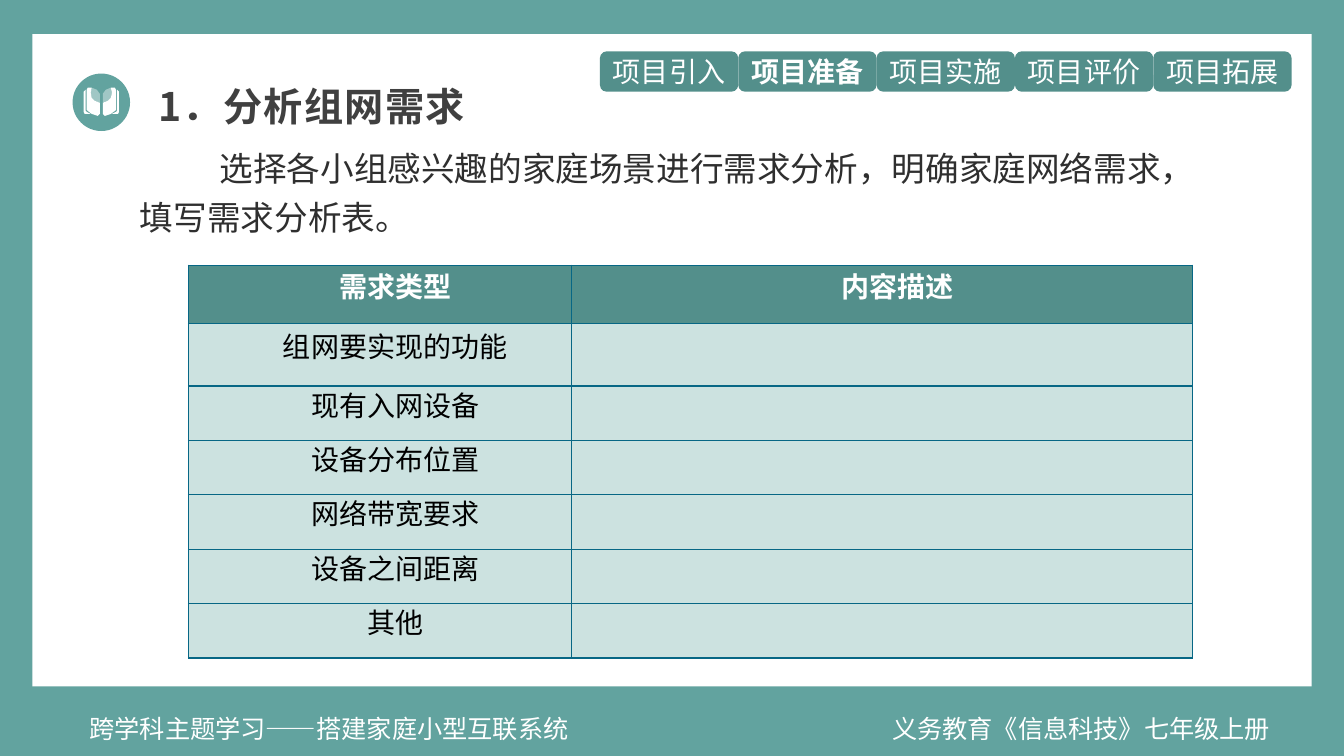
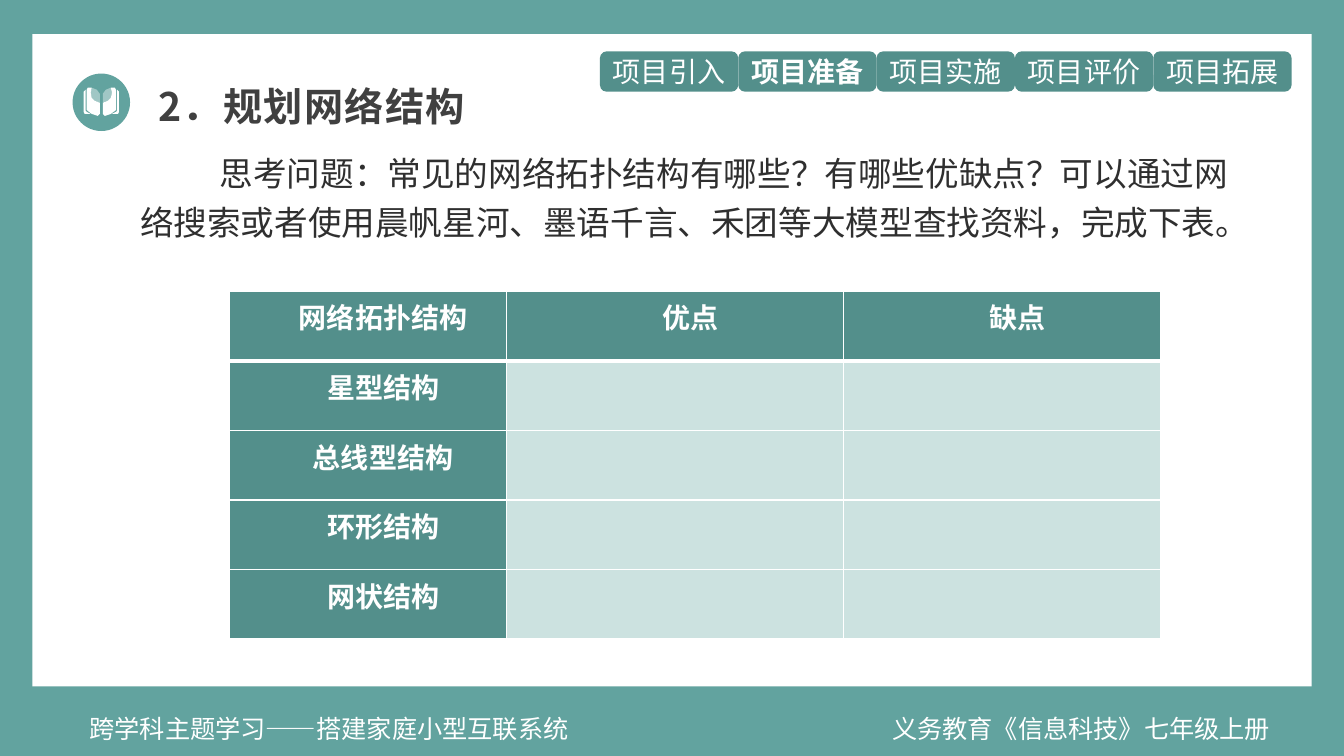
from dataclasses import dataclass

from lxml import etree
from pptx import Presentation
from pptx import util as u
from pptx.dml.color import RGBColor
from pptx.enum import shapes, text
from pptx.oxml import ns


@dataclass(frozen=True)
class Theme:
    # Colours
    teal: str = "62A39F"
    dark_teal: str = "538F8B"
    pale_teal: str = "CCE2E0"
    grid_blue: str = "076785"
    white: str = "FFFFFF"
    black: str = "000000"
    title: str = "404040"
    body: str = "2F2F2F"
    # Fonts and type sizes
    font: str = "Noto Sans CJK SC"
    latin: str = "Calibri"
    title_size: int = 28
    body_size: int = 24
    label_size: int = 20
    footer_size: int = 18


T = Theme()
CENTER = text.PP_ALIGN.CENTER
STAGES = ["项目引入", "项目准备", "项目实施", "项目评价", "项目拓展"]
CURRENT_STAGE = "项目准备"

# Right half of the book icon, in inches; the left half is its mirror image
SPINE = 1.005
PAGE = [(1.02, 1.02), (1.02, 1.13), (1.04, 1.15), (1.1, 1.13), (1.14, 1.1),
        (1.15, 1.09), (1.15, 0.89), (1.14, 0.87), (1.1, 0.87), (1.11, 0.92),
        (1.1, 0.97), (1.07, 1.0)]
COVER = [(1.15, 1.11), (1.11, 1.13), (1.15, 1.13), (1.17, 1.13), (1.18, 1.11),
         (1.18, 0.91), (1.16, 0.89), (1.16, 1.1)]
LEAF = [(1.1, 0.87), (1.05, 0.89), (1.02, 0.93), (1.02, 1.02), (1.07, 1.0),
        (1.1, 0.97), (1.11, 0.92)]


def rgb(color):
    return RGBColor.from_string(color)


def sub(parent, tag, **attrs):
    return etree.SubElement(parent, ns.qn(tag), attrs)


def write(tf, content, *, size, color, font=T.font, bold=False, align=None,
          indent=0, line=None, tracking=0):
    """Put one formatted paragraph into a text frame."""
    p = tf.paragraphs[0]
    if align is not None:
        p.alignment = align
    if line is not None:
        p.line_spacing = line
    if indent:
        pPr = p._p.get_or_add_pPr()
        pPr.set("marL", "0")
        pPr.set("indent", str(u.Inches(indent)))
    r = p.add_run()
    r.text = content
    r.font.size, r.font.bold, r.font.name = u.Pt(size), bold, font
    r.font.color.rgb = rgb(color)
    rPr = r._r.get_or_add_rPr()
    sub(rPr, "a:ea", typeface=T.font)
    if tracking:
        rPr.set("spc", str(tracking * 100))


def set_borders(cell, color, **widths):
    tcPr = cell._tc.get_or_add_tcPr()
    for side in "LRTB":
        ln = sub(tcPr, f"a:ln{side}", w=str(u.Pt(widths.get(side, 1))))
        sub(sub(ln, "a:solidFill"), "a:srgbClr", val=color)


class Deck:
    def __init__(self):
        self.prs = Presentation()
        self.prs.slide_width = u.Inches(13.33)
        self.prs.slide_height = u.Inches(7.5)
        fill = self.prs.slide_master.background.fill
        fill.solid()
        fill.fore_color.rgb = rgb(T.teal)
        self.s = None

    def paint(self, sp, color, alpha=None):
        sp.shadow.inherit = False
        sp.fill.solid()
        sp.fill.fore_color.rgb = rgb(color)
        sp.line.fill.background()
        if alpha is not None:
            clr = sp._element.spPr.find(".//" + ns.qn("a:srgbClr"))
            sub(clr, "a:alpha", val=str(alpha * 1000))

    def shape(self, kind, left, top, width, height, color):
        sp = self.s.shapes.add_shape(kind, *map(u.Inches, (left, top, width, height)))
        self.paint(sp, color)
        return sp

    def textbox(self, left, top, width, height, content, wrap=True, **fmt):
        box = self.s.shapes.add_textbox(*map(u.Inches, (left, top, width, height)))
        tf = box.text_frame
        tf.word_wrap = wrap
        tf.auto_size = text.MSO_AUTO_SIZE.SHAPE_TO_FIT_TEXT
        write(tf, content, **fmt)

    def mirrored(self, half, color, alpha=None):
        other = [(2 * SPINE - x, y) for x, y in half]
        right, left = ([(u.Inches(x), u.Inches(y)) for x, y in pts]
                       for pts in (half, other))
        fb = self.s.shapes.build_freeform(*right[0])
        fb.add_line_segments(right[1:])
        fb.move_to(*left[0])
        fb.add_line_segments(left[1:])
        self.paint(fb.convert_to_shape(), color, alpha)

    def stage_tabs(self):
        left, right = 5.95, 12.81
        step = (right - left) / len(STAGES)
        for i, stage in enumerate(STAGES):
            sp = self.shape(shapes.MSO_SHAPE.ROUNDED_RECTANGLE,
                            left + i * step, 0.51, step, 0.4, T.dark_teal)
            sp.text_frame.vertical_anchor = text.MSO_ANCHOR.MIDDLE
            write(sp.text_frame, stage, size=T.label_size, color=T.white,
                  bold=stage == CURRENT_STAGE, align=CENTER)

    def book_icon(self):
        self.shape(shapes.MSO_SHAPE.OVAL, 0.72, 0.73, 0.57, 0.57, T.teal)
        self.mirrored(PAGE, T.white)
        self.mirrored(COVER, T.white)
        self.mirrored(LEAF, T.white, alpha=40)

    def new_slide(self, title):
        """Start a slide with panel, footers, stage tabs, icon and title."""
        self.s = self.prs.slides.add_slide(self.prs.slide_layouts[6])
        self.shape(shapes.MSO_SHAPE.RECTANGLE, 0.32, 0.34, 12.69, 6.47, T.white)
        footer = dict(size=T.footer_size, color=T.white)
        self.textbox(8.75, 7.03, 4.13, 0.4, "义务教育《信息科技》七年级上册", **footer)
        self.textbox(0.79, 7.03, 5, 0.4, "跨学科主题学习——搭建家庭小型互联系统",
                     wrap=False, **footer)
        self.stage_tabs()
        self.textbox(1.08, 0.77, 4.02, 0.57, title, size=T.title_size,
                     color=T.title, bold=True, align=CENTER, tracking=1)
        self.book_icon()

    def body(self, top, width, content):
        self.textbox(1.29, top, width, 1.01, content, size=T.body_size,
                     color=T.body, indent=0.79, line=1.2)

    def table(self, left, top, cols, rows, header, labels, *, border,
              header_rule=1, header_font=T.font, dark_labels=False):
        """Draw a form: a header row, a label column and empty answer cells."""
        frame = self.s.shapes.add_table(
            len(rows), len(cols),
            *map(u.Inches, (left, top, sum(cols), sum(rows))))
        tbl = frame.table
        for col, width in zip(tbl.columns, cols):
            col.width = u.Inches(width)
        for row, height in zip(tbl.rows, rows):
            row.height = u.Inches(height)
        answers = [""] * (len(cols) - 1)
        grid = [header] + [[label] + answers for label in labels]
        for i, line in enumerate(grid):
            for j, content in enumerate(line):
                cell = tbl.cell(i, j)
                dark = i == 0 or (dark_labels and j == 0)
                rule = {0: {"B": header_rule}, 1: {"T": header_rule}}.get(i, {})
                set_borders(cell, border, **rule)
                cell.fill.solid()
                cell.fill.fore_color.rgb = rgb(T.dark_teal if dark else T.pale_teal)
                if not content:
                    continue
                cell.vertical_anchor = text.MSO_ANCHOR.MIDDLE
                cell.margin_left = cell.margin_right = u.Inches(0.07)
                cell.margin_top = cell.margin_bottom = 0
                write(cell.text_frame, content, size=T.label_size, bold=dark,
                      color=T.white if dark else T.black,
                      font=header_font if i == 0 else T.font,
                      align=CENTER, indent=0.3, line=u.Pt(15.6))


def main():
    deck = Deck()

    # Slide 1: needs analysis
    deck.new_slide("1．分析组网需求")
    deck.body(1.34, 10.54, "选择各小组感兴趣的家庭场景进行需求分析，明确家庭网络需求，填写需求分析表。")
    deck.table(1.87, 2.63, [3.8, 6.16], [0.58, 0.62] + [0.54] * 5,
               ["需求类型", "内容描述"],
               ["组网要实现的功能", "现有入网设备", "设备分布位置",
                "网络带宽要求", "设备之间距离", "其他"],
               border=T.grid_blue, header_font=T.latin)

    # Slide 2: network topology
    deck.new_slide("2．规划网络结构")
    deck.body(1.39, 11.22, "思考问题：常见的网络拓扑结构有哪些？有哪些优缺点？可以通过网络搜索"
                           "或者使用晨帆星河、墨语千言、禾团等大模型查找资料，完成下表。")
    deck.table(2.28, 2.89, [2.74, 3.35, 3.14], [0.69] * 5,
               ["网络拓扑结构", "优点", "缺点"],
               ["星型结构", "总线型结构", "环形结构", "网状结构"],
               border=T.white, header_rule=3, dark_labels=True)

    deck.prs.save("out.pptx")


if __name__ == "__main__":
    main()
